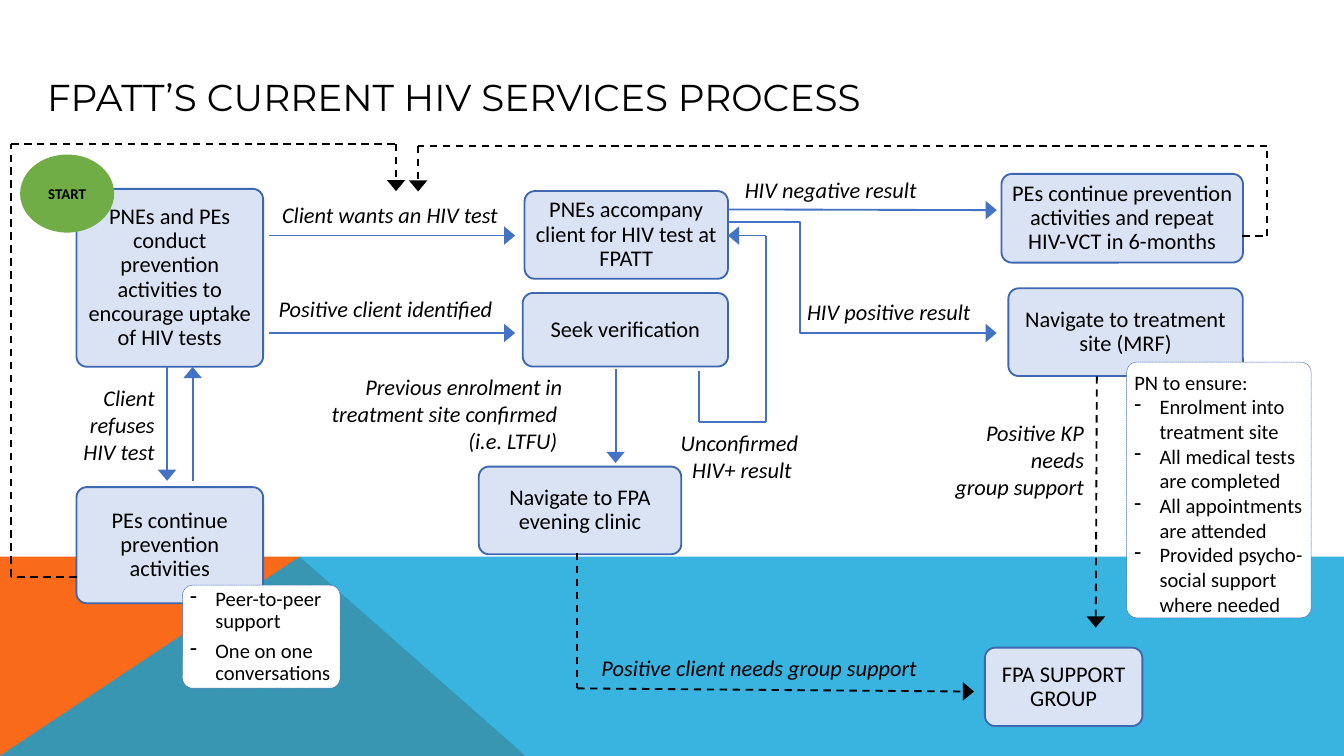
from itertools import pairwise
from lxml.etree import SubElement
from pptx import Presentation
from pptx.dml.color import RGBColor
from pptx.enum.dml import MSO_LINE
from pptx.enum.shapes import MSO_CONNECTOR, MSO_SHAPE
from pptx.enum.text import MSO_ANCHOR, PP_ALIGN
from pptx.oxml.ns import qn
from pptx.util import Pt

COLORS = {"orange": "F96A1B", "sky": "08A1D9", "step": "DAE3F3", "border": "3E67B2",
          "arrow": "4472C4", "start": "70AD47", "black": "000000", "white": "FFFFFF"}
ALIGN = {"l": PP_ALIGN.LEFT, "c": PP_ALIGN.CENTER, "r": PP_ALIGN.RIGHT}
WIDTH, HEIGHT, HORIZON = 720, 405, 298.3
TITLE = "FPATT’S CURRENT HIV SERVICES PROCESS"

BACKDROP = [
    ("orange", None, [(0, HEIGHT), (0, HORIZON), (160.5, HORIZON), (281.5, HEIGHT)]),
    ("sky", 80, [(0, HEIGHT), (160.5, HORIZON), (WIDTH, HORIZON), (WIDTH, HEIGHT)]),
]
STEPS = [
    ("PNEs accompany client for HIV test at FPATT", (281, 102.4, 109, 47)),
    ("Seek verification", (280, 157, 110, 39.4)),
    ("PEs continue prevention activities", (41, 261, 100, 62.2)),
    ("Navigate to FPA evening clinic", (256.5, 250, 108.5, 47)),
    ("PEs continue prevention activities and repeat HIV-VCT in 6-months",
     (536.5, 93.2, 129.4, 47.5)),
    ("Navigate to treatment site (MRF)", (540.2, 154.5, 125.6, 47)),
    ("PNEs and PEs conduct prevention activities to encourage uptake of HIV tests",
     (41, 101.2, 100, 95.3)),
    ("FPA SUPPORT GROUP", (527.6, 347, 84.4, 42)),
]
NOTES = [
    (None, ["Peer-to-peer support", "One on one conversations"],
     (97.8, 313.5, 84.4, 55.2), MSO_ANCHOR.MIDDLE, 0.9, 3.9),
    ("PN to ensure:",
     ["Enrolment into treatment site", "All medical tests are completed",
      "All appointments are attended", "Provided psycho-social support where needed"],
     (603.6, 194, 98.8, 137), MSO_ANCHOR.TOP, 1, 0),
]
LABELS = [
    (["Client wants an HIV test"], (144, 104.4, 131, 21.6), "l"),
    (["Positive client identified"], (139.3, 154.8, 134.6, 21.6), "c"),
    (["Previous enrolment in treatment site confirmed ", "(i.e. LTFU) "],
     (170.2, 196.6, 138.2, 51), "r"),
    (["Unconfirmed ", "HIV+ result"], (354, 226.3, 87, 36), "c"),
    (["HIV negative result"], (391.9, 91, 118, 21.6), "l"),
    (["HIV positive result"], (425.3, 156.4, 103.7, 21.6), "l"),
    (["Client refuses HIV test"], (25.2, 202.3, 64.8, 51), "r"),
    (["Positive client needs group support"], (312.5, 347, 188.6, 21.6), "c"),
    (["Positive KP needs", "group support"], (497.8, 221, 90, 51), "r"),
]
SOLID_ROUTES = [
    [(144, 126.2), (276, 126.2)],
    [(144, 178.4), (276, 178.4)],
    [(329.8, 197.5), (329.8, 248)],
    [(374.4, 198.7), (374.4, 226), (410.4, 226), (410.4, 126.2), (390, 126.2)],
    [(390, 112.2), (534, 112.6)],
    [(89.5, 196.6), (89.5, 257.6)],
    [(103.2, 257.6), (103.2, 196.6)],
]
DASHED_ROUTES = [
    [(665.5, 126.5), (678.8, 126.5), (678.8, 78.2), (224, 78.2), (224, 102.6)],
    [(41, 309), (6, 309), (6, 77), (212.2, 77), (212.2, 102.4)],
    [(309.2, 296.2), (309.2, 368.8), (521.8, 370.5)],
    [(587.6, 201.6), (587, 336.2)],
]
ELBOW = [(390, 118.8), (534, 178.4)]
ELBOW_BEND = 26800


def color(name):
    return RGBColor.from_string(COLORS[name])


def points(*values):
    return [Pt(value) for value in values]


def apply(target, **formats):
    for key, value in formats.items():
        setattr(target, key, value)


def write(paragraph, text, size, **formats):
    run = paragraph.add_run()
    run.text = text
    apply(run.font, **{"name": "Calibri", "size": Pt(size), **formats})
    run.font.color.rgb = color("black")


def paint(shape, fill, border=None, width=1):
    shape.shadow.inherit = False
    shape.fill.solid()
    shape.fill.fore_color.rgb = color(fill)
    if border:
        shape.line.color.rgb = color(border)
        shape.line.width = Pt(width)
    else:
        shape.line.fill.background()


def add_backdrop(slide, fill, opacity, corners):
    outline = slide.shapes.build_freeform(*points(*corners[0]))
    outline.add_line_segments([points(*corner) for corner in corners[1:]])
    area = outline.convert_to_shape()
    paint(area, fill)
    if opacity:
        tint = area.fill._xPr.find(".//" + qn("a:srgbClr"))
        SubElement(tint, qn("a:alpha"), val=str(opacity * 1000))


def add_box(slide, bounds, fill, width, anchor=MSO_ANCHOR.MIDDLE, radius=5.5):
    box = slide.shapes.add_shape(MSO_SHAPE.ROUNDED_RECTANGLE, *points(*bounds))
    box.adjustments[0] = radius / min(bounds[2:])
    paint(box, fill, "border", width)
    margins = dict.fromkeys(
        ("margin_left", "margin_top", "margin_right", "margin_bottom"), Pt(2.5))
    apply(box.text_frame, word_wrap=True, vertical_anchor=anchor, **margins)
    return box


def add_step(slide, text, bounds):
    paragraph = add_box(slide, bounds, "step", 1).text_frame.paragraphs[0]
    apply(paragraph, alignment=PP_ALIGN.CENTER, line_spacing=0.9)
    write(paragraph, text, 12)


def add_note(slide, heading, items, bounds, anchor, spacing, gap):
    note = add_box(slide, bounds, "white", 0.25, anchor)
    note.line.dash_style = MSO_LINE.SQUARE_DOT
    lines = ([(heading, False)] if heading else []) + [(item, True) for item in items]
    for index, (text, bulleted) in enumerate(lines):
        frame = note.text_frame
        paragraph = frame.add_paragraph() if index else frame.paragraphs[0]
        if bulleted:
            properties = paragraph._p.get_or_add_pPr()
            properties.set("marL", str(Pt(13.5)))
            properties.set("indent", str(-Pt(13.5)))
            SubElement(properties, qn("a:buChar"), char="-")
        apply(paragraph, alignment=PP_ALIGN.LEFT, line_spacing=spacing,
              space_after=Pt(gap))
        write(paragraph, text, 11)


def add_label(slide, lines, bounds, align):
    frame = slide.shapes.add_textbox(*points(*bounds)).text_frame
    frame.word_wrap = True
    for index, text in enumerate(lines):
        paragraph = frame.add_paragraph() if index else frame.paragraphs[0]
        paragraph.alignment = ALIGN[align]
        write(paragraph, text, 12, italic=True)


def add_link(slide, start, end, stroke, dashed=False, arrow=True,
             kind=MSO_CONNECTOR.STRAIGHT):
    link = slide.shapes.add_connector(kind, *points(*start, *end))
    link.line.color.rgb = color(stroke)
    link.line.width = Pt(1)
    if dashed:
        link.line.dash_style = MSO_LINE.DASH
    if arrow:
        SubElement(link.line._get_or_add_ln(), qn("a:tailEnd"),
                   type="triangle", w="lg", len="med")
    SubElement(link._element.spPr, qn("a:effectLst"))
    return link


def add_route(slide, stops, stroke, dashed):
    for start, end in pairwise(stops):
        add_link(slide, start, end, stroke, dashed, arrow=end == stops[-1])


def main():
    deck = Presentation()
    apply(deck, slide_width=Pt(WIDTH), slide_height=Pt(HEIGHT))
    slide = deck.slides.add_slide(deck.slide_layouts[5])
    title = slide.shapes.title
    left, top, width, height = points(18, 26.4, 672, 51)
    apply(title, left=left, top=top, width=width, height=height)
    title.text_frame.vertical_anchor = MSO_ANCHOR.MIDDLE
    heading = title.text_frame.paragraphs[0]
    heading.alignment = PP_ALIGN.LEFT
    write(heading, TITLE, 20, name="Montserrat")

    for area in BACKDROP:
        add_backdrop(slide, *area)
    for step in STEPS:
        add_step(slide, *step)
    for note in NOTES:
        add_note(slide, *note)
    for stops in SOLID_ROUTES:
        add_route(slide, stops, "arrow", False)
    for stops in DASHED_ROUTES:
        add_route(slide, stops, "black", True)
    elbow = add_link(slide, *ELBOW, "arrow", kind=MSO_CONNECTOR.ELBOW)
    bends = elbow._element.spPr.find(".//" + qn("a:avLst"))
    SubElement(bends, qn("a:gd"), name="adj1", fmla=f"val {ELBOW_BEND}")
    for label in LABELS:
        add_label(slide, *label)

    start = slide.shapes.add_shape(MSO_SHAPE.OVAL, *points(10.8, 82.8, 50.4, 41.8))
    paint(start, "start")
    apply(start.text_frame, word_wrap=True, vertical_anchor=MSO_ANCHOR.MIDDLE)
    start.text_frame.paragraphs[0].alignment = PP_ALIGN.CENTER
    write(start.text_frame.paragraphs[0], "START", 8, bold=True)
    deck.save("out.pptx")


if __name__ == "__main__":
    main()
